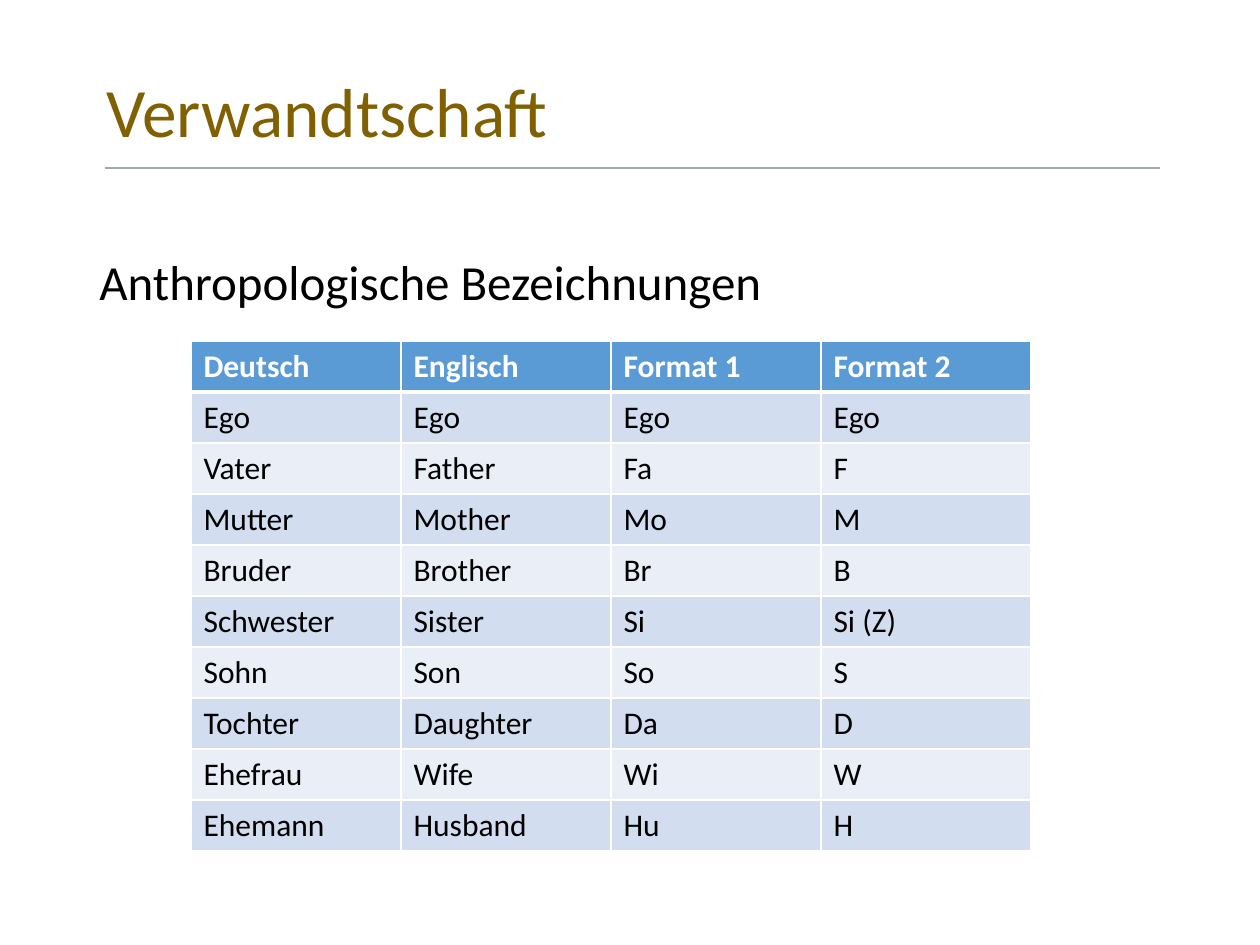
from lxml import etree
from pptx import Presentation
from pptx import util as u
from pptx.dml.color import RGBColor
from pptx.enum import shapes, text
from pptx.oxml import ns

TITLE = "Verwandtschaft"
SUBTITLE = "Anthropologische Bezeichnungen"
ROWS = [
    ("Deutsch", "Englisch", "Format 1", "Format 2"),
    ("Ego", "Ego", "Ego", "Ego"),
    ("Vater", "Father", "Fa", "F"),
    ("Mutter", "Mother", "Mo", "M"),
    ("Bruder", "Brother", "Br", "B"),
    ("Schwester", "Sister", "Si", "Si (Z)"),
    ("Sohn", "Son", "So", "S"),
    ("Tochter", "Daughter", "Da", "D"),
    ("Ehefrau", "Wife", "Wi", "W"),
    ("Ehemann", "Husband", "Hu", "H"),
]
COLORS = {
    "title": "806000", "rule": "9FACA1", "text": "000000", "white": "FFFFFF",
    "header": "5B9BD5", "odd": "D2DEEF", "even": "EAEFF7",
}
FONT = "Calibri"
COLUMN_WIDTH, ROW_HEIGHT = 210, 51


def px(length):
    return u.Emu(round(length * 914400 / 126))


def color(name):
    return RGBColor.from_string(COLORS[name])


def style(paragraph, size, color_name, bold=False):
    paragraph.alignment = text.PP_ALIGN.LEFT
    font = paragraph.font
    font.name, font.size, font.bold = FONT, u.Pt(size), bold
    font.color.rgb = color(color_name)


def add_border(cell, side, width):
    line = etree.SubElement(cell._tc.get_or_add_tcPr(), ns.qn(f"a:ln{side}"), w=str(u.Pt(width)))
    fill = etree.SubElement(line, ns.qn("a:solidFill"))
    etree.SubElement(fill, ns.qn("a:srgbClr"), val=COLORS["white"])


def add_title(slide):
    title = slide.shapes.title
    title.left, title.top, title.width, title.height = map(px, (94, 84, 1071, 63))
    frame = title.text_frame
    frame.text = TITLE
    frame.auto_size = text.MSO_AUTO_SIZE.NONE
    frame.vertical_anchor = text.MSO_ANCHOR.MIDDLE
    paragraph = frame.paragraphs[0]
    paragraph.line_spacing = 0.9
    style(paragraph, 39.6, "title")


def add_rule(slide):
    rule = slide.shapes.add_connector(
        shapes.MSO_CONNECTOR.STRAIGHT, px(105), px(168), px(1160), px(168))
    rule.line.color.rgb = color("rule")
    rule.line.width = u.Pt(1.25)
    etree.SubElement(rule._element.spPr, ns.qn("a:effectLst"))


def add_subtitle(slide):
    frame = slide.shapes.add_textbox(px(87), px(252), px(1086), px(600)).text_frame
    frame.word_wrap = True
    frame.text = SUBTITLE
    paragraph = frame.paragraphs[0]
    paragraph.line_spacing = 0.9
    paragraph.space_before = u.Pt(10)
    style(paragraph, 28, "text")


def add_kinship_table(slide):
    row_count, column_count = len(ROWS), len(ROWS[0])
    table = slide.shapes.add_table(
        row_count, column_count, px(191), px(341),
        px(column_count * COLUMN_WIDTH), px(row_count * ROW_HEIGHT)).table
    for column in table.columns:
        column.width = px(COLUMN_WIDTH)
    for row_index, values in enumerate(ROWS):
        table.rows[row_index].height = px(ROW_HEIGHT)
        is_header = row_index == 0
        fill_name = "header" if is_header else "odd" if row_index % 2 else "even"
        widths = {"L": 1, "R": 1, "T": 3 if row_index == 1 else 1, "B": 3 if is_header else 1}
        for column_index, value in enumerate(values):
            cell = table.cell(row_index, column_index)
            cell.text = value
            style(cell.text_frame.paragraphs[0], 18, "white" if is_header else "text", is_header)
            for side, width in widths.items():
                add_border(cell, side, width)
            cell.fill.solid()
            cell.fill.fore_color.rgb = color(fill_name)


def main():
    presentation = Presentation()
    presentation.slide_width, presentation.slide_height = px(1260), px(945)
    slide = presentation.slides.add_slide(presentation.slide_layouts[5])
    add_title(slide)
    add_rule(slide)
    add_subtitle(slide)
    add_kinship_table(slide)
    presentation.save("out.pptx")


if __name__ == "__main__":
    main()
